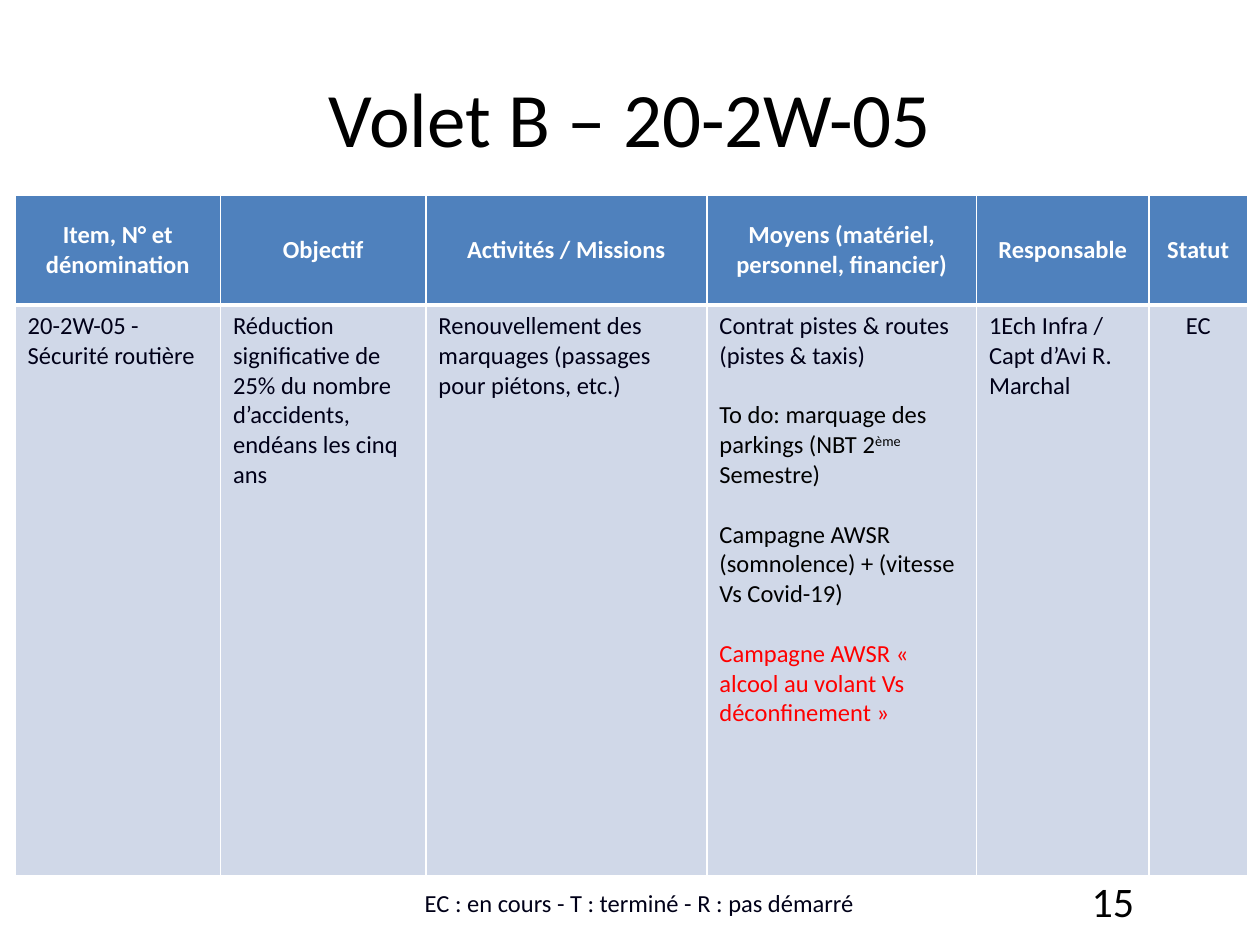
from dataclasses import dataclass

from lxml.etree import SubElement
from pptx import Presentation
from pptx.dml.color import RGBColor
from pptx.enum.text import MSO_ANCHOR, PP_ALIGN
from pptx.oxml.ns import qn
from pptx.util import Inches, Pt

WHITE = RGBColor(0xFF, 0xFF, 0xFF)
BLACK = RGBColor(0x00, 0x00, 0x00)
NAVY = RGBColor(0x00, 0x00, 0x18)
RED = RGBColor(0xFF, 0x00, 0x00)
HEADER_BLUE = RGBColor(0x4F, 0x81, 0xBD)
BODY_BLUE = RGBColor(0xD0, 0xD8, 0xE8)
FONT = "Calibri"
BLANK_LINE = Pt(17)


@dataclass(frozen=True)
class Para:
    text: str
    color: RGBColor = NAVY
    superscript: str = ""
    rest: str = ""


@dataclass(frozen=True)
class Column:
    heading: str
    width: float
    paras: tuple[Para, ...]
    align: PP_ALIGN = PP_ALIGN.LEFT


COLUMNS = (
    Column("Item, N° et dénomination", 1.63, (Para("20-2W-05 - Sécurité routière"),)),
    Column("Objectif", 1.63, (
        Para("Réduction significative de 25% du nombre d’accidents, endéans les cinq ans"),)),
    Column("Activités / Missions", 2.23, (
        Para("Renouvellement des marquages (passages pour piétons, etc.)"),)),
    Column("Moyens (matériel, personnel, financier)", 2.14, (
        Para("Contrat pistes & routes (pistes & taxis)"),
        Para("To do: marquage des parkings (NBT 2", BLACK, "ème", " Semestre)"),
        Para("Campagne AWSR (somnolence) + (vitesse Vs Covid-19)", BLACK),
        Para("Campagne AWSR « alcool au volant Vs déconfinement »", RED))),
    Column("Responsable", 1.37, (Para("1Ech Infra / Capt d’Avi R. Marchal"),)),
    Column("Statut", 0.78, (Para("EC"),), PP_ALIGN.CENTER),
)
ROW_HEIGHTS = (0.87, 4.53)


def style_font(font, size: float, color: RGBColor, bold: bool = False) -> None:
    font.name = FONT
    font.size = Pt(size)
    font.bold = bold
    font.color.rgb = color


def set_borders(cell, top: float, bottom: float) -> None:
    """Give the cell white borders, 1 pt wide at the sides; call before setting its fill."""
    tc_pr = cell._tc.get_or_add_tcPr()
    for tag, width in (("lnL", 1), ("lnR", 1), ("lnT", top), ("lnB", bottom)):
        line = SubElement(tc_pr, qn(f"a:{tag}"), w=str(Pt(width)))
        fill = SubElement(line, qn("a:solidFill"))
        SubElement(fill, qn("a:srgbClr"), val=str(WHITE))


def fill_cell(cell, paras: tuple[Para, ...], align: PP_ALIGN, bold: bool = False) -> None:
    tf = cell.text_frame
    for i, para in enumerate(paras):
        p = tf.add_paragraph() if i else tf.paragraphs[0]
        p.alignment = align
        if i:
            p.space_before = BLANK_LINE
        for text in filter(None, (para.text, para.superscript, para.rest)):
            r = p.add_run()
            r.text = text
            style_font(r.font, 14, para.color, bold)
            if text == para.superscript:
                r.font._element.set("baseline", "30000")


def add_action_table(s) -> None:
    frame = s.shapes.add_table(
        len(ROW_HEIGHTS), len(COLUMNS), Inches(0.12), Inches(1.55),
        Inches(sum(c.width for c in COLUMNS)), Inches(sum(ROW_HEIGHTS)))
    table = frame.table
    for row, height in zip(table.rows, ROW_HEIGHTS):
        row.height = Inches(height)
    for i, column in enumerate(COLUMNS):
        table.columns[i].width = Inches(column.width)
        head, body = table.cell(0, i), table.cell(1, i)
        set_borders(head, top=1, bottom=3)
        set_borders(body, top=3, bottom=1)
        for cell, color in ((head, HEADER_BLUE), (body, BODY_BLUE)):
            cell.fill.solid()
            cell.fill.fore_color.rgb = color
        head.vertical_anchor = MSO_ANCHOR.MIDDLE
        fill_cell(head, (Para(column.heading, WHITE),), PP_ALIGN.CENTER, bold=True)
        fill_cell(body, column.paras, column.align)


def add_footer(s, text: str, left: float, width: float, height: float, size: float,
               color: RGBColor, align: PP_ALIGN, anchor: MSO_ANCHOR) -> None:
    box = s.shapes.add_textbox(Inches(left), Inches(6.95), Inches(width), Inches(height))
    tf = box.text_frame
    tf.word_wrap = True
    tf.vertical_anchor = anchor
    tf.text = text
    p = tf.paragraphs[0]
    p.alignment = align
    style_font(p.runs[0].font, size, color)


def main() -> None:
    prs = Presentation()
    prs.slide_width, prs.slide_height = Inches(10), Inches(7.5)
    s = prs.slides.add_slide(prs.slide_layouts[5])

    title = s.shapes.title
    title.left, title.top = Inches(0.5), Inches(0.3)
    title.width, title.height = Inches(9), Inches(1.25)
    tf = title.text_frame
    tf.text = "Volet B – 20-2W-05"
    tf.vertical_anchor = MSO_ANCHOR.MIDDLE
    tf.paragraphs[0].alignment = PP_ALIGN.CENTER
    style_font(tf.paragraphs[0].runs[0].font, 44, BLACK)

    add_action_table(s)
    add_footer(s, "15", 7.17, 1.93, 0.4, 24, BLACK, PP_ALIGN.RIGHT, MSO_ANCHOR.MIDDLE)
    add_footer(s, "EC : en cours - T : terminé - R : pas démarré", 2.32, 5.51, 0.38, 14,
               NAVY, PP_ALIGN.CENTER, MSO_ANCHOR.BOTTOM)
    prs.save("out.pptx")


if __name__ == "__main__":
    main()
